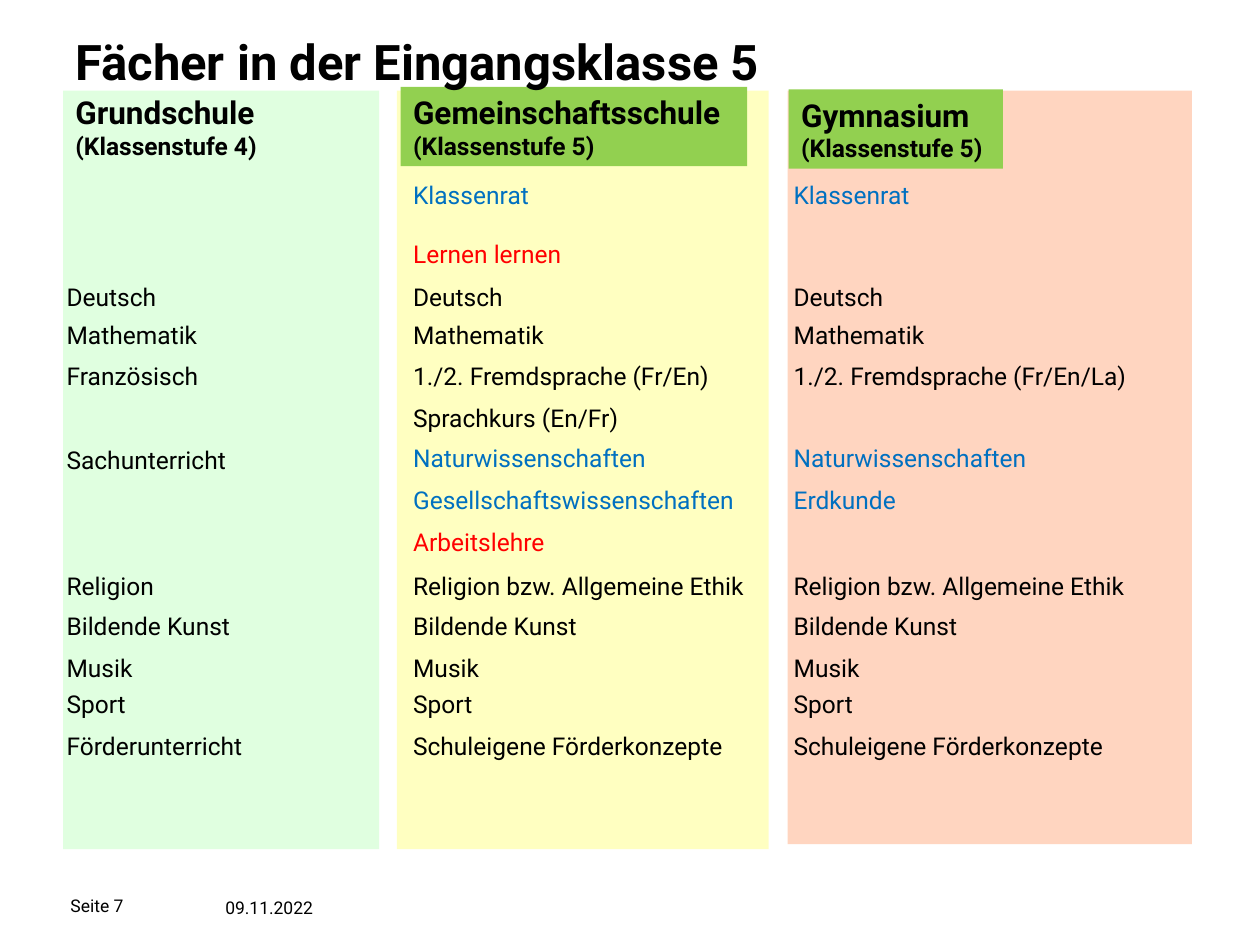
from lxml.etree import SubElement
from pptx import Presentation
from pptx.dml.color import RGBColor
from pptx.enum.shapes import MSO_SHAPE
from pptx.enum.text import MSO_ANCHOR, PP_ALIGN
from pptx.oxml.ns import qn
from pptx.util import Inches, Pt

FONT = "Roboto"
BLACK, BLUE, RED, GREEN = "000000", "0070C0", "FF0000", "92D050"
PANEL_OPACITY = 60

TITLE = "Fächer in der Eingangsklasse 5"

# panel and heading: left, top, width, height in inches
SCHOOLS = [
    {"name": "Grundschule", "level": "(Klassenstufe 4)", "color": "CCFFCC",
     "panel": (0.5, 0.72, 2.51, 6.02), "heading": (0.5, 0.69, 1.74, 0.63),
     "heading_fill": None, "subject_left": 0.43, "subject_width": 2.46},
    {"name": "Gemeinschaftsschule", "level": "(Klassenstufe 5)", "color": "FFFF99",
     "panel": (3.15, 0.72, 2.95, 6.02), "heading": (3.18, 0.69, 2.75, 0.63),
     "heading_fill": GREEN, "subject_left": 3.18, "subject_width": 3.05},
    {"name": "Gymnasium", "level": "(Klassenstufe 5)", "color": "FFBA97",
     "panel": (6.25, 0.72, 3.21, 5.98), "heading": (6.26, 0.71, 1.7, 0.63),
     "heading_fill": GREEN, "subject_left": 6.2, "subject_width": 3.05},
]

# top of the row, text color, one subject per school
SUBJECT_ROWS = [
    (1.38, BLUE, (None, "Klassenrat", "Klassenrat")),
    (1.85, RED, (None, "Lernen lernen", None)),
    (2.19, BLACK, ("Deutsch", "Deutsch", "Deutsch")),
    (2.49, BLACK, ("Mathematik", "Mathematik", "Mathematik")),
    (2.82, BLACK, ("Französisch", "1./2. Fremdsprache (Fr/En)",
                   "1./2. Fremdsprache (Fr/En/La)")),
    (3.15, BLACK, (None, "Sprachkurs (En/Fr)", None)),
    (3.47, BLUE, (None, "Naturwissenschaften", "Naturwissenschaften")),
    (3.48, BLACK, ("Sachunterricht", None, None)),
    (3.8, BLUE, (None, "Gesellschaftswissenschaften", "Erdkunde")),
    (4.13, RED, (None, "Arbeitslehre", None)),
    (4.48, BLACK, ("Religion", "Religion bzw. Allgemeine Ethik",
                   "Religion bzw. Allgemeine Ethik")),
    (4.8, BLACK, ("Bildende Kunst", "Bildende Kunst", "Bildende Kunst")),
    (5.13, BLACK, ("Musik", "Musik", "Musik")),
    (5.42, BLACK, ("Sport", "Sport", "Sport")),
    (5.75, BLACK, ("Förderunterricht", "Schuleigene Förderkonzepte",
                   "Schuleigene Förderkonzepte")),
]


def rgb(value):
    return RGBColor.from_string(value)


def write(shape, lines, color=BLACK, bold=False):
    """Fill a shape with paragraphs given as (text, size in points)."""
    frame = shape.text_frame
    frame.word_wrap = True
    frame.vertical_anchor = MSO_ANCHOR.TOP
    for index, (text, size) in enumerate(lines):
        para = frame.paragraphs[0] if index == 0 else frame.add_paragraph()
        para.alignment = PP_ALIGN.LEFT
        span = para.add_run()
        span.text = text
        span.font.name = FONT
        span.font.size = Pt(size)
        span.font.bold = bold
        span.font.color.rgb = rgb(color)


def add_text(page, place, lines, **style):
    box = page.shapes.add_textbox(*map(Inches, place))
    write(box, lines, **style)
    return box


def add_rectangle(page, place, color, opacity=100):
    rectangle = page.shapes.add_shape(MSO_SHAPE.RECTANGLE, *map(Inches, place))
    rectangle.shadow.inherit = False
    rectangle.line.fill.background()
    rectangle.fill.solid()
    rectangle.fill.fore_color.rgb = rgb(color)
    if opacity < 100:
        fill_color = rectangle.fill._xPr.find(qn("a:solidFill"))[0]
        SubElement(fill_color, qn("a:alpha")).set("val", str(opacity * 1000))
    return rectangle


def add_school(page, school):
    add_rectangle(page, school["panel"], school["color"], PANEL_OPACITY)
    lines = [(school["name"], 18), (school["level"], 14)]
    if school["heading_fill"]:
        heading = add_rectangle(page, school["heading"], school["heading_fill"])
        write(heading, lines, bold=True)
    else:
        add_text(page, school["heading"], lines, bold=True)


def add_footer(page):
    number = add_text(page, (0.56, 7.07, 1.26, 0.24), [("Seite 7", 10)])
    frame = number.text_frame
    frame.margin_left = frame.margin_right = 0
    frame.margin_top = frame.margin_bottom = 0
    frame.vertical_anchor = MSO_ANCHOR.MIDDLE
    add_text(page, (1.69, 7.07, 1.26, 0.24), [("09.11.2022", 10)])


def main():
    deck = Presentation()
    deck.slide_width, deck.slide_height = Inches(10), Inches(7.5)
    page = deck.slides.add_slide(deck.slide_layouts[6])

    for school in SCHOOLS:
        add_school(page, school)
    for top, color, subjects in SUBJECT_ROWS:
        for school, subject in zip(SCHOOLS, subjects):
            if subject:
                place = (school["subject_left"], top, school["subject_width"], 0.33)
                add_text(page, place, [(subject, 14)], color=color)
    add_text(page, (0.5, 0.2, 8.96, 0.57), [(TITLE, 28)], bold=True)
    add_footer(page)
    deck.save("out.pptx")


if __name__ == "__main__":
    main()
